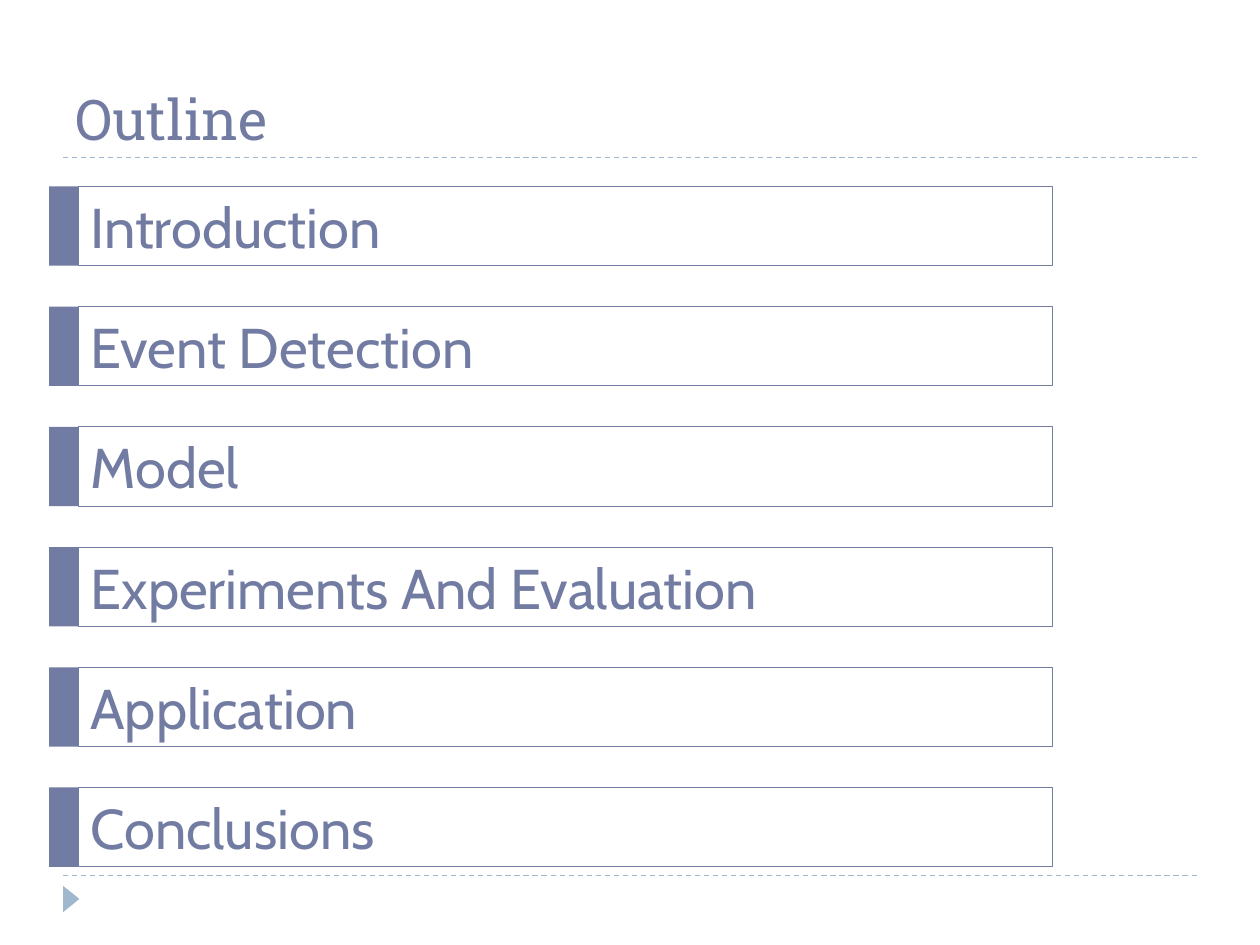
from pptx import Presentation
from pptx.dml.color import RGBColor
from pptx.enum.dml import MSO_LINE
from pptx.enum.shapes import MSO_CONNECTOR, MSO_SHAPE as Shape
from pptx.enum.text import MSO_ANCHOR as Anchor, PP_ALIGN as Align
from pptx.oxml.ns import qn
from pptx.util import Inches, Pt
from lxml.etree import SubElement

COLORS = {"accent": "727CA3", "light": "9FB8CD"}
TOPICS = ["Introduction", "Event Detection", "Model",
          "Experiments And Evaluation", "Application", "Conclusions"]
FIRST_TOP, LAST_TOP = 1.48, 6.25
ROW_HEIGHT = 0.63
TAB_LEFT, TAB_WIDTH = 0.39, 0.23
BOX_WIDTH = 7.73


def color(name):
    return RGBColor.from_string(COLORS[name])


class OutlineSlide:
    heading_font = "Roboto Slab"
    body_font = "Cabin"
    text_size = Pt(32)

    def __init__(self, slide):
        self.shapes = slide.shapes

    def set_text(self, frame, text, font_name, anchor):
        frame.word_wrap = True
        frame.vertical_anchor = anchor
        line = frame.paragraphs[0]
        line.text = text
        line.alignment = Align.LEFT
        line.font.name = font_name
        line.font.size = self.text_size
        line.font.color.rgb = color("accent")

    def title(self, text, *box):
        heading = self.shapes.add_textbox(*map(Inches, box))
        self.set_text(heading.text_frame, text, self.heading_font,
                      Anchor.BOTTOM)

    def solid(self, kind, fill, *box):
        block = self.shapes.add_shape(kind, *map(Inches, box))
        block.shadow.inherit = False
        block.fill.solid()
        block.fill.fore_color.rgb = color(fill)
        block.line.fill.background()
        return block

    def topic_box(self, text, *box):
        frame = self.shapes.add_shape(Shape.RECTANGLE, *map(Inches, box))
        frame.shadow.inherit = False
        frame.fill.background()
        frame.line.color.rgb = color("accent")
        frame.line.width = Pt(0.5)
        self.set_text(frame.text_frame, text, self.body_font, Anchor.MIDDLE)

    def dashed_rule(self, left, right, y):
        rule = self.shapes.add_connector(
            MSO_CONNECTOR.STRAIGHT, *map(Inches, (left, y, right, y)))
        rule.line.color.rgb = color("light")
        rule.line.width = Pt(0.75)
        rule.line.dash_style = MSO_LINE.DASH
        SubElement(rule._element.spPr, qn("a:effectLst"))


def main():
    deck = Presentation()
    deck.slide_width, deck.slide_height = Inches(10), Inches(7.5)
    outline = OutlineSlide(deck.slides.add_slide(deck.slide_layouts[6]))

    # Rules and footer marker
    for y in (6.95, 1.25):
        outline.dashed_rule(0.5, 9.5, y)
    marker = outline.solid(Shape.ISOSCELES_TRIANGLE, "light",
                           0.46, 7.07, 0.21, 0.13)
    marker.rotation = 90

    # Title
    outline.title("Outline", 0.5, 0.17, 9, 1.08)

    # Topics, each a box with a coloured tab on its left
    pitch = (LAST_TOP - FIRST_TOP) / (len(TOPICS) - 1)
    for row, topic in enumerate(TOPICS):
        top = FIRST_TOP + row * pitch
        outline.topic_box(topic, TAB_LEFT + TAB_WIDTH, top,
                          BOX_WIDTH, ROW_HEIGHT)
        outline.solid(Shape.RECTANGLE, "accent",
                      TAB_LEFT, top, TAB_WIDTH, ROW_HEIGHT)

    deck.save("out.pptx")


if __name__ == "__main__":
    main()
